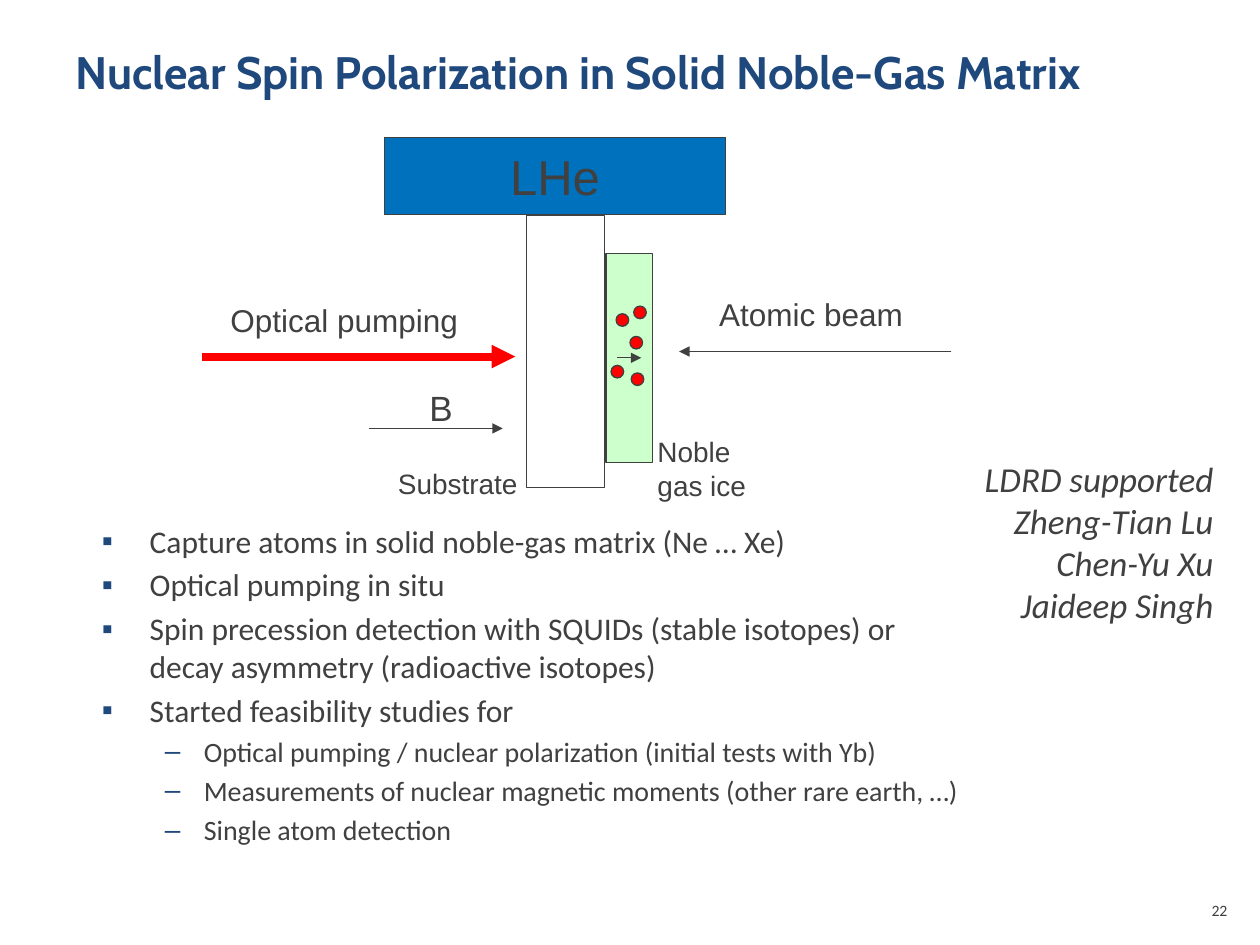
import pptx
import pptx.util
import pptx.dml.color
import pptx.enum.shapes
import pptx.enum.text
import pptx.oxml
import pptx.oxml.ns
from lxml import etree

Inches, Pt = pptx.util.Inches, pptx.util.Pt
RGBColor = pptx.dml.color.RGBColor
SHAPE = pptx.enum.shapes.MSO_SHAPE
ALIGN = pptx.enum.text.PP_ALIGN
ANCHOR = pptx.enum.text.MSO_ANCHOR

NAVY = RGBColor(0x1F, 0x49, 0x7D)
GRAY = RGBColor(0x40, 0x40, 0x40)
WHITE = RGBColor(0xFF, 0xFF, 0xFF)
ICE_GREEN = RGBColor(0xCC, 0xFF, 0xCC)
HELIUM_BLUE = RGBColor(0x00, 0x71, 0xBC)
RED = RGBColor(0xFF, 0x00, 0x00)

LABEL = {"name": "Arial", "color": GRAY}
BODY = {"name": "Calibri", "color": GRAY}

# Bullet character, font size, left margin, hanging indent, space before
BULLET_LEVELS = [("▪", 18, 0.38, 0.38, 3.5), ("–", 16, 0.81, 0.31, 3.2)]
POINTS = [
    (0, "Capture atoms in solid noble-gas matrix (Ne … Xe)"),
    (0, "Optical pumping in situ"),
    (0, "Spin precession detection with SQUIDs (stable isotopes) or\n"
        "decay asymmetry (radioactive isotopes)"),
    (0, "Started feasibility studies for"),
    (1, "Optical pumping / nuclear polarization (initial tests with Yb)"),
    (1, "Measurements of nuclear magnetic moments (other rare earth, …)"),
    (1, "Single atom detection"),
]
CREDITS = ["LDRD supported", "Zheng-Tian Lu", "Chen-Yu Xu", "Jaideep Singh"]


def format_font(font, formats):
    for key, value in formats.items():
        if key == "color":
            font.color.rgb = value
        else:
            setattr(font, key, value)


def add_text(slide, box, paragraphs, formats, align=ALIGN.LEFT, wrap=False):
    frame = slide.shapes.add_textbox(*map(Inches, box)).text_frame
    frame.word_wrap = wrap
    for index, text in enumerate(paragraphs):
        paragraph = frame.paragraphs[0] if index == 0 else frame.add_paragraph()
        paragraph.text = text
        paragraph.alignment = align
        for run in paragraph.runs:
            format_font(run.font, formats)
    return frame


def add_solid(slide, kind, box, fill):
    solid = slide.shapes.add_shape(kind, *map(Inches, box))
    solid.shadow.inherit = False
    solid.fill.solid()
    solid.fill.fore_color.rgb = fill
    solid.line.color.rgb = GRAY
    solid.line.width = Pt(0.75)
    return solid


def add_arrow(slide, start_x, end_x, y, color=GRAY, width=0.75):
    """Draw a horizontal arrow that points at end_x."""
    arrow = slide.shapes.add_connector(
        pptx.enum.shapes.MSO_CONNECTOR.STRAIGHT,
        *map(Inches, (start_x, y, end_x, y)))
    arrow.line.color.rgb = color
    arrow.line.width = Pt(width)
    qn = pptx.oxml.ns.qn
    etree.SubElement(arrow.line._get_or_add_ln(), qn("a:tailEnd"), type="triangle")
    etree.SubElement(arrow._element.spPr, qn("a:effectLst"))


def add_bullet(paragraph, character, margin, hanging):
    properties = paragraph._p.get_or_add_pPr()
    properties.set("marL", str(Inches(margin)))
    properties.set("indent", str(-Inches(hanging)))
    qn = pptx.oxml.ns.qn
    color = etree.SubElement(properties, qn("a:buClr"))
    etree.SubElement(color, qn("a:srgbClr"), val=str(NAVY))
    etree.SubElement(properties, qn("a:buFont"), typeface="Arial")
    etree.SubElement(properties, qn("a:buChar"), char=character)


def place_title(slide, box):
    title = slide.shapes.title
    title.left, title.top, title.width, title.height = map(Inches, box)
    frame = title.text_frame
    frame.text = "Nuclear Spin Polarization in Solid Noble-Gas Matrix"
    frame.vertical_anchor = ANCHOR.TOP
    paragraph = frame.paragraphs[0]
    paragraph.alignment = ALIGN.LEFT
    format_font(paragraph.runs[0].font,
                {"name": "Cabin", "size": Pt(26), "bold": True, "color": NAVY})


def draw_apparatus(slide, left, top):
    """Draw the cooled substrate, the ice with its atoms, and the beams."""
    add_solid(slide, SHAPE.RECTANGLE, (left + 2.58, top + 0.62, 0.62, 2.16), WHITE)
    add_solid(slide, SHAPE.RECTANGLE, (left + 3.21, top + 0.92, 0.37, 1.66), ICE_GREEN)

    helium = add_solid(slide, SHAPE.RECTANGLE, (left + 1.45, top, 2.71, 0.61), HELIUM_BLUE)
    helium.text_frame.text = "LHe"
    helium.text_frame.word_wrap = False
    helium.text_frame.vertical_anchor = ANCHOR.MIDDLE
    helium.text_frame.paragraphs[0].alignment = ALIGN.CENTER
    format_font(helium.text_frame.paragraphs[0].runs[0].font, LABEL | {"size": Pt(28)})

    add_arrow(slide, left + 3.3, left + 3.49, top + 1.75)
    add_arrow(slide, left, left + 2.49, top + 1.74, RED, 4.5)
    add_arrow(slide, left + 5.95, left + 3.79, top + 1.7)
    add_arrow(slide, left + 1.33, left + 2.39, top + 2.31)

    labels = [
        ("Substrate", 16, 1.46, 2.56, 1.15, 0.37),
        ("Noble\ngas ice", 16, 3.52, 2.31, 0.9, 0.64),
        ("Optical pumping", 18, 0.13, 1.25, 2.01, 0.4),
        ("Atomic beam", 18, 4.01, 1.2, 1.66, 0.4),
        ("B", 20, 1.71, 1.93, 0.39, 0.43),
    ]
    for text, size, x, y, width, height in labels:
        add_text(slide, (left + x, top + y, width, height), [text],
                 LABEL | {"size": Pt(size)})

    atoms = [(3.41, 1.87), (3.43, 1.34), (3.4, 1.58), (3.29, 1.4), (3.25, 1.81)]
    for x, y in atoms:
        add_solid(slide, SHAPE.OVAL, (left + x, top + y, 0.1, 0.1), RED)


def write_points(slide, box):
    frame = add_text(slide, box, [text for _, text in POINTS], BODY, wrap=True)
    for index, (level, _) in enumerate(POINTS):
        character, size, margin, hanging, gap = BULLET_LEVELS[level]
        paragraph = frame.paragraphs[index]
        paragraph.level = level
        add_bullet(paragraph, character, margin, hanging)
        paragraph.font.size = Pt(size)
        for run in paragraph.runs:
            run.font.size = Pt(size)
        if index:
            paragraph.space_before = Pt(gap)


def main():
    presentation = pptx.Presentation()
    presentation.slide_width, presentation.slide_height = Inches(10), Inches(7.5)
    slide = presentation.slides.add_slide(presentation.slide_layouts[5])
    place_title(slide, (0.5, 0.3, 9, 1.25))
    write_points(slide, (0.71, 4.09, 8.68, 2.86))
    draw_apparatus(slide, 1.6, 1.09)
    add_text(slide, (7.7, 3.58, 2.03, 1.45), CREDITS,
             BODY | {"size": Pt(20), "italic": True}, ALIGN.RIGHT)
    add_text(slide, (9.42, 7.1, 0.42, 0.4), ["22"], BODY | {"size": Pt(9)},
             ALIGN.RIGHT, wrap=True)
    presentation.save("out.pptx")


if __name__ == "__main__":
    main()
